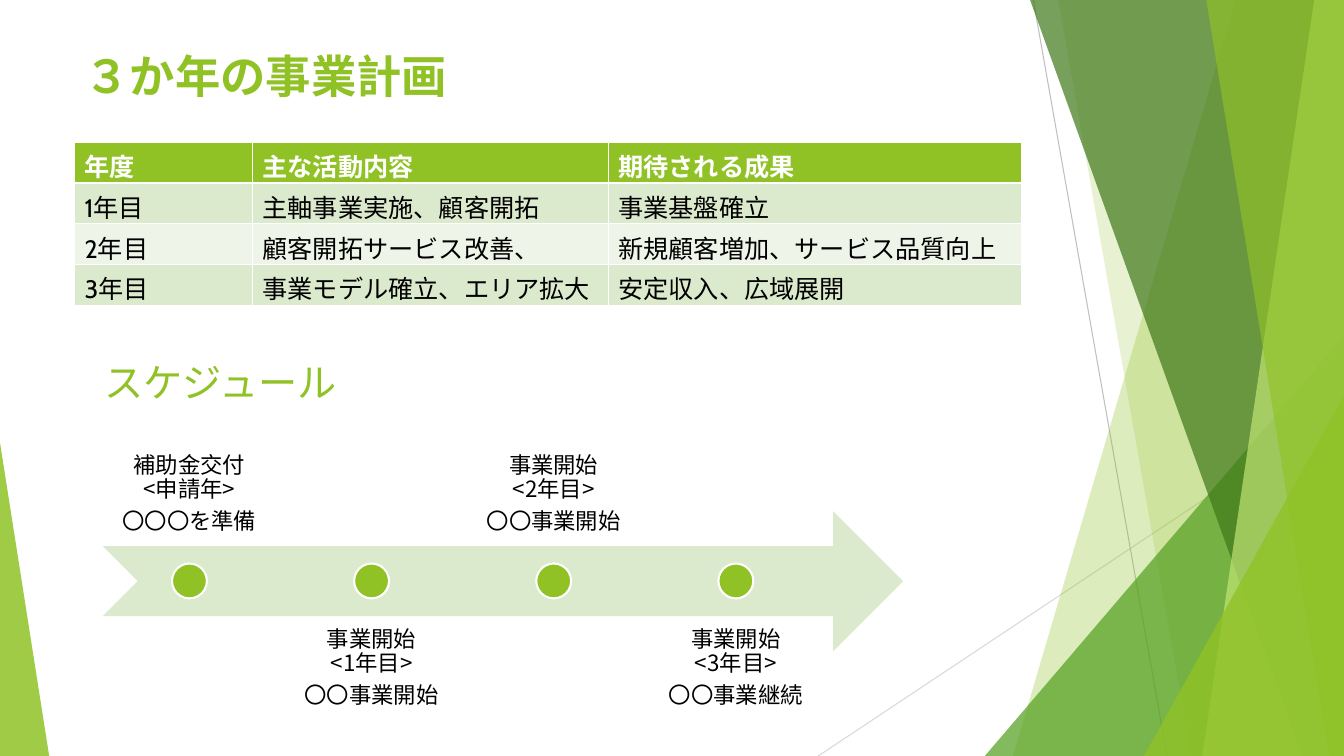
from dataclasses import dataclass

from lxml import etree
from pptx import Presentation
from pptx import util as u
from pptx.dml.color import RGBColor
from pptx.enum import shapes, text
from pptx.oxml import ns


@dataclass(frozen=True)
class Theme:
    green: str = "90C226"
    leaf: str = "54A021"
    forest: str = "3F7819"
    lime: str = "C0E474"
    pale: str = "DBE9CD"
    paler: str = "EEF4E8"
    white: str = "FFFFFF"
    black: str = "000000"
    line_light: str = "D9D9D9"
    line_dark: str = "BFBFBF"
    heading_font: str = "Noto Sans CJK JP"
    table_font: str = "Cabin"
    title_size: float = 32.4
    subtitle_size: float = 28
    table_size: float = 18
    milestone_size: float = 16


theme = Theme()


def paint(shape, color, opacity=100):
    """Fill a shape with one colour, without outline or shadow."""
    shape.shadow.inherit = False
    shape.fill.solid()
    shape.fill.fore_color.rgb = RGBColor.from_string(color)
    shape.line.fill.background()
    if opacity < 100:
        srgb = shape._element.spPr.find(".//" + ns.qn("a:srgbClr"))
        etree.SubElement(srgb, ns.qn("a:alpha"), val=str(opacity * 1000))


def write(para, wording, size, color, font=theme.heading_font, bold=False):
    """Put wording in a paragraph and set its font."""
    para.text = wording
    para.font.size = u.Pt(size)
    para.font.bold = bold
    para.font.color.rgb = RGBColor.from_string(color)
    para.font.name = font
    etree.SubElement(para.font._element, ns.qn("a:ea"), typeface=theme.heading_font)


# Deck and page
deck = Presentation()
deck.slide_width, deck.slide_height = u.Cm(33.87), u.Cm(19.05)
page = deck.slides.add_slide(deck.slide_layouts[6])
right, bottom = 33.87, 19.05

# Thin background lines
for x1, y1, x2, y2, color in [
    (20.62, bottom, right, 10.24, theme.line_light),
    (26.04, 0, 29.41, bottom, theme.line_dark),
]:
    line = page.shapes.add_connector(
        shapes.MSO_CONNECTOR.STRAIGHT, u.Cm(x1), u.Cm(y1), u.Cm(x2), u.Cm(y2))
    line.line.color.rgb = RGBColor.from_string(color)
    line.line.width = u.Pt(0.75)
    etree.SubElement(line._element.spPr, ns.qn("a:effectLst"))

# Translucent facets: corners, colour, opacity
low_right, top_right = (right, bottom), (right, 0)
facets = [
    ([(31.14, 0), (25.53, bottom), low_right, top_right], theme.green, 30),
    ([(26.67, 0), (30.02, bottom), low_right, top_right], theme.green, 20),
    ([(24.82, bottom), (right, 8.46), low_right], theme.leaf, 72),
    ([(25.96, 0), (32.82, bottom), low_right, top_right], theme.forest, 70),
    ([(33.12, 0), (30.3, bottom), low_right, top_right], theme.lime, 70),
    ([(30.4, 0), (33.5, bottom), low_right, top_right], theme.green, 65),
    ([(28.83, bottom), (right, 9.98), low_right], theme.green, 80),
    ([(0, 11.15), (1.24, bottom), (0, bottom)], theme.green, 85),
]
for corners, color, opacity in facets:
    points = [(u.Cm(x), u.Cm(y)) for x, y in corners]
    outline = page.shapes.build_freeform(*points[0])
    outline.add_line_segments(points[1:], close=True)
    paint(outline.convert_to_shape(), color, opacity)

# Headings
for wording, left, top, width, height, size, bold in [
    ("３か年の事業計画", 1.88, 1.04, 23.88, 1.7, theme.title_size, True),
    ("スケジュール", 2.39, 8.81, 8, 1.6, theme.subtitle_size, False),
]:
    box = page.shapes.add_textbox(u.Cm(left), u.Cm(top), u.Cm(width), u.Cm(height))
    box.text_frame.word_wrap = True
    box.text_frame.vertical_anchor = text.MSO_ANCHOR.MIDDLE
    write(box.text_frame.paragraphs[0], wording, size, theme.green, bold=bold)

# Three-year plan table
plan = [
    ("年度", "主な活動内容", "期待される成果"),
    ("1年目", "主軸事業実施、顧客開拓", "事業基盤確立"),
    ("2年目", "顧客開拓サービス改善、", "新規顧客増加、サービス品質向上"),
    ("3年目", "事業モデル確立、エリア拡大", "安定収入、広域展開"),
]
row_fills = [theme.green, theme.pale, theme.paler, theme.pale]
table = page.shapes.add_table(
    len(plan), 3, u.Cm(1.88), u.Cm(3.58), u.Cm(23.86), u.Cm(4.12)).table
for column, width in zip(table.columns, (4.48, 8.97, 10.41)):
    column.width = u.Cm(width)
for r, (entries, row_fill) in enumerate(zip(plan, row_fills)):
    for c, entry in enumerate(entries):
        cell = table.cell(r, c)
        cell.vertical_anchor = text.MSO_ANCHOR.MIDDLE
        cell.fill.solid()
        cell.fill.fore_color.rgb = RGBColor.from_string(row_fill)
        write(cell.text_frame.paragraphs[0], entry, theme.table_size,
              theme.black if r else theme.white, theme.table_font, bold=r == 0)

# Schedule arrow
arrow = page.shapes.add_shape(
    shapes.MSO_SHAPE.NOTCHED_RIGHT_ARROW, u.Cm(2.59), u.Cm(12.88), u.Cm(20.17), u.Cm(3.53))
paint(arrow, theme.pale)

# Milestones, alternately above and below the arrow
milestones = [
    ("補助金交付\v<申請年>", "〇〇〇を準備"),
    ("事業開始\v<1年目>", "〇〇事業開始"),
    ("事業開始\v<2年目>", "〇〇事業開始"),
    ("事業開始\v<3年目>", "〇〇事業継続"),
]
step, box_width, box_height, dot_size = 4.59, 4.37, 3.53, 0.88
for i, wordings in enumerate(milestones):
    left = 2.59 + i * step
    below = i % 2 == 1
    box = page.shapes.add_textbox(
        u.Cm(left), u.Cm(15.52 if below else 10.24), u.Cm(box_width), u.Cm(box_height))
    frame = box.text_frame
    frame.word_wrap = True
    frame.vertical_anchor = text.MSO_ANCHOR.TOP if below else text.MSO_ANCHOR.BOTTOM
    frame.margin_left = frame.margin_right = u.Cm(0.3)
    frame.margin_top = frame.margin_bottom = u.Cm(0.3)
    for para, wording in zip((frame.paragraphs[0], frame.add_paragraph()), wordings):
        write(para, wording, theme.milestone_size, theme.black)
        para.alignment = text.PP_ALIGN.CENTER
        para.line_spacing = 0.9
        para.space_after = u.Pt(5.6)

    dot = page.shapes.add_shape(
        shapes.MSO_SHAPE.OVAL, u.Cm(left + (box_width - dot_size) / 2), u.Cm(14.2),
        u.Cm(dot_size), u.Cm(dot_size))
    paint(dot, theme.green)
    dot.line.color.rgb = RGBColor.from_string(theme.white)
    dot.line.width = u.Pt(1.5)

deck.save("out.pptx")
